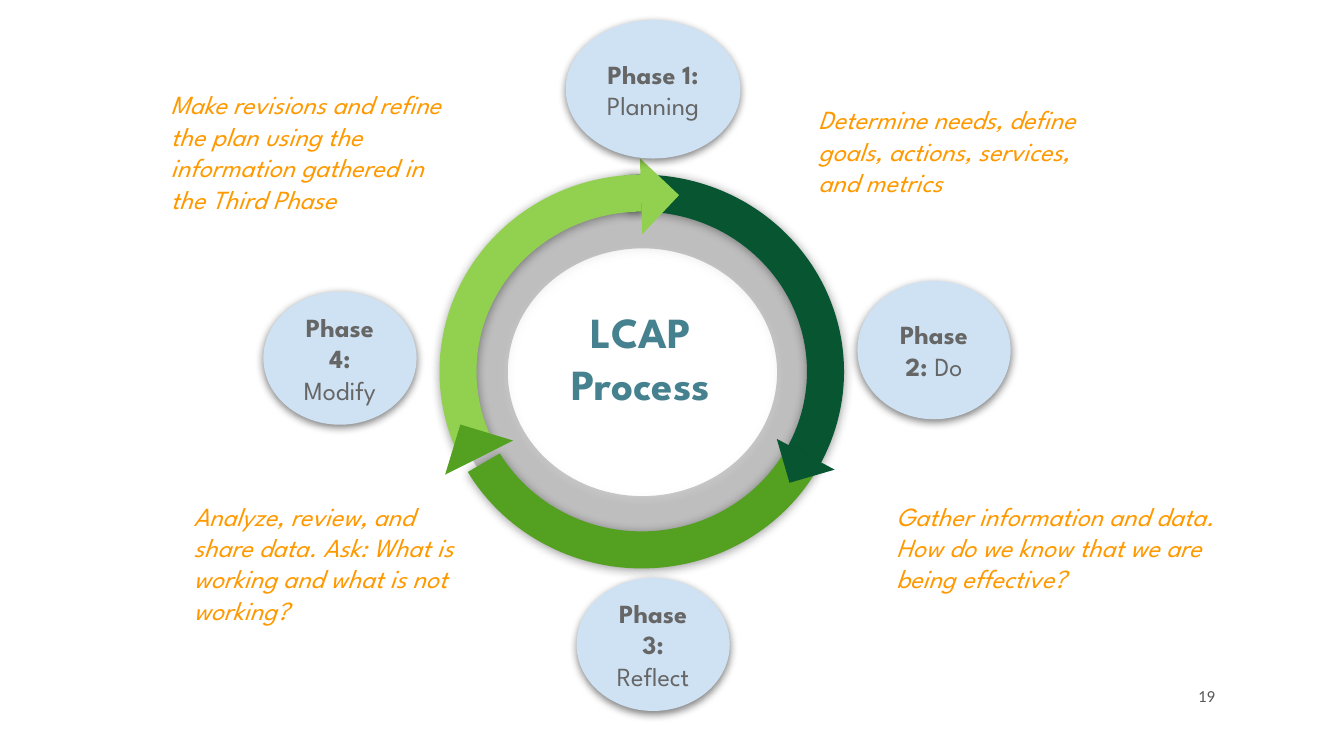
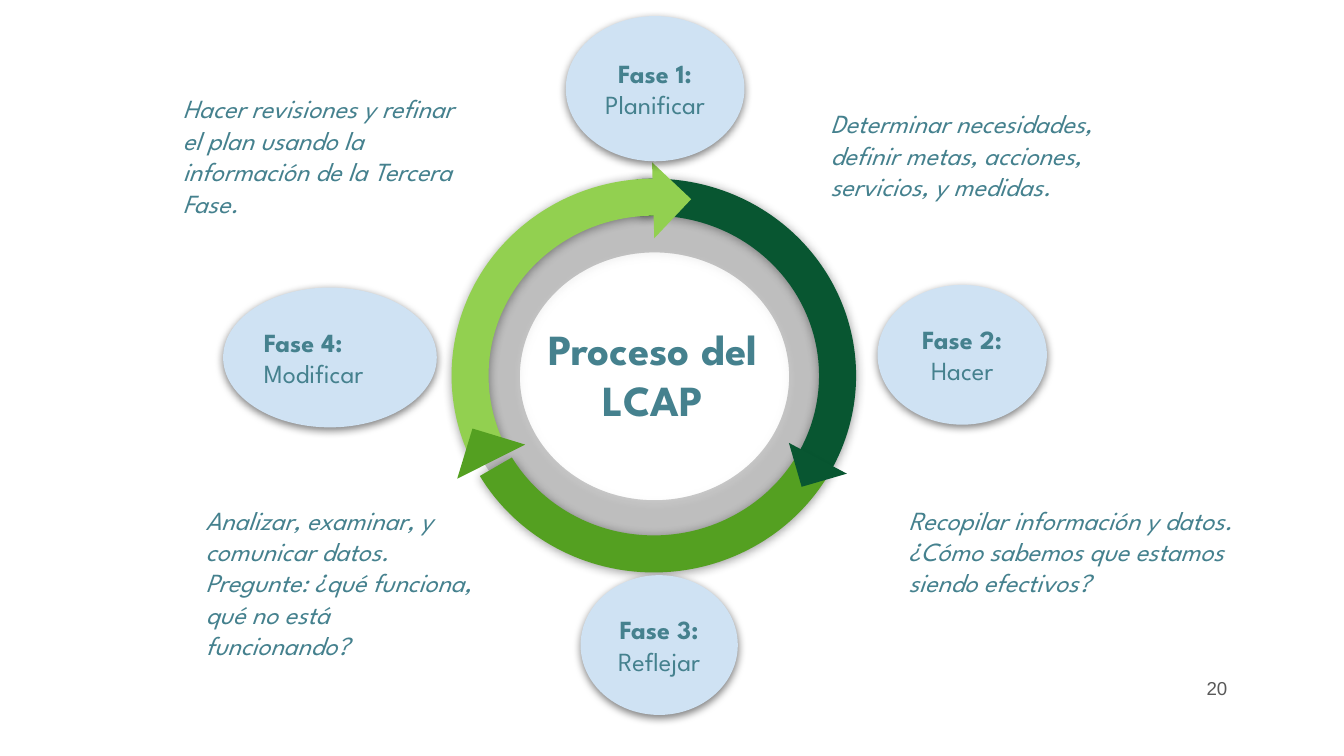
from dataclasses import dataclass
from lxml.etree import SubElement
from pptx import Presentation
from pptx.dml.color import RGBColor
from pptx.enum.shapes import MSO_SHAPE as Shape
from pptx.enum.text import MSO_ANCHOR as Anchor, MSO_AUTO_SIZE as Fit, PP_ALIGN as Align
from pptx.oxml.ns import qn
from pptx.util import Inches, Pt


@dataclass(frozen=True)
class Theme:
    font: str = "League Spartan"
    teal: str = "45818E"
    grey: str = "666666"
    orange: str = "FF9900"
    number: str = "595959"
    bubble: str = "CFE2F3"
    ring: str = "000000"
    dark: str = "085631"
    mid: str = "54A021"
    light: str = "92D050"
    head: int = 23
    text: int = 14


THEME = Theme()
COLS, ROWS = 100, 56.25
CELL = Inches(0.1)

# blur and distance in points, opacity in percent
SOFT = (5.6, 0.8, 40)
DEEP = (4.5, 1.5, 50)

RING = (33.4, 14.1, 28.8, 27.2)
ARC = (32.7, 13, 30.1, 29.3)
THICK = 9.4 / 100

# colour, then start and end in degrees, clockwise from the right
ARCS = {
    "dark": (THEME.dark, 265, 29),
    "light": (THEME.light, 155, 270),
    "mid": (THEME.mid, 29, 150),
}
# colour, turn, box
TIPS = {
    "light": (THEME.light, 223.3, (45.7, 12.6, 4, 4)),
    "dark": (THEME.dark, 343.8, (58.2, 32.1, 3.5, 3.4)),
    "mid": (THEME.mid, 106.9, (33.7, 32, 3.9, 4.1)),
}
NOTES = [
    (60.2, 7, 23.4, 8.2),
    (66, 36.5, 28.7, 8.2),
    (13.7, 36.5, 21.7, 9),
    (12, 5.9, 22.8, 8.2),
]


@dataclass(frozen=True)
class Cycle:
    """One slide; move shifts the wheel and the notes, mid is the title's centre row."""
    title: str
    mid: float
    move: tuple
    phases: list
    notes: list
    inks: tuple
    number: tuple


ENGLISH = Cycle(
    "LCAP Process", 26.6, (0, 0),
    [("Phase 1: ", "Planning", (42.1, 1.5, 13, 10.3)),
     ("Phase 2: ", "Do", (63.8, 20.9, 11.4, 10.3)),
     ("Phase 3: ", "Reflect", (42.9, 43, 11.4, 9.9)),
     ("Phase 4:", "Modify", (19.6, 21.7, 11.4, 9.9))],
    ["Determine needs, define goals, actions, services, and metrics",
     "Gather information and data. How do we know that we are being effective?",
     "Analyze, review, and share data. Ask: What is working and what is not working?",
     "Make revisions and refine the plan using the information gathered in the Third Phase"],
    (THEME.grey, THEME.orange),
    ("19", "Calibri", 9, (87.4, 50.3, 4, 2.9)))

SPANISH = Cycle(
    "Proceso del LCAP", 27.8, (0.9, 0.3),
    [("Fase 1: ", "Planificar", (42.1, 1.2, 13.3, 10.8)),
     ("Fase 2: ", "Hacer", (65.3, 21.2, 12.6, 10.4)),
     ("Fase 3: ", "Reflejar", (43.2, 42.8, 11.7, 10.4)),
     ("Fase 4: ", "Modificar", (16.6, 21.4, 15.9, 10.4))],
    ["Determinar necesidades, definir metas, acciones, servicios, y medidas.",
     "Recopilar información y datos. ¿Cómo sabemos que estamos siendo efectivos?",
     "Analizar, examinar, y comunicar datos. Pregunte: ¿qué funciona, qué no está funcionando?",
     "Hacer revisiones y refinar el plan usando la información de la Tercera Fase."],
    (THEME.teal, THEME.teal),
    ("20", "Arial", 10, (88.2, 49.7, 4.1, 3)))


def cells(box, move=(0, 0)):
    """Turn a box in grid cells into lengths, shifted by move."""
    left, top, wide, high = box
    return [round(n * CELL) for n in (left + move[0], top + move[1], wide, high)]


def add_run(para, text, ink, size=THEME.text, font=THEME.font, bold=False, slant=False):
    run = para.add_run()
    run.text = text
    face = run.font
    face.name, face.size = font, Pt(size)
    face.bold, face.italic = bold, slant
    face.color.rgb = RGBColor.from_string(ink)


def set_frame(shape, inset, anchor, align):
    """Prepare the text frame and return its first paragraph."""
    frame = shape.text_frame
    frame.word_wrap, frame.auto_size = True, Fit.NONE
    frame.vertical_anchor = anchor
    frame.margin_left = frame.margin_right = Inches(inset)
    frame.margin_top = frame.margin_bottom = Inches(inset)
    para = frame.paragraphs[0]
    para.alignment = align
    return para


def add_alpha(color, share):
    SubElement(color, qn("a:alpha"), val=str(share * 1000))


def add_form(slide, kind, box, ink, shade=None, turn=0):
    """Add a flat preset shape with an optional downward shadow."""
    form = slide.shapes.add_shape(kind, *box)
    form.fill.solid()
    form.fill.fore_color.rgb = RGBColor.from_string(ink)
    form.line.fill.background()
    form.rotation = turn
    form.shadow.inherit = False
    if shade:
        blur, dist, share = shade
        effects = form._element.spPr.find(qn("a:effectLst"))
        outer = SubElement(effects, qn("a:outerShdw"), blurRad=str(Pt(blur)),
                           dist=str(Pt(dist)), dir="5400000", algn="ctr", rotWithShape="0")
        add_alpha(SubElement(outer, qn("a:srgbClr"), val="000000"), share)
    return form


def add_ring(slide, move, shade=None):
    ring = add_form(slide, Shape.DONUT, cells(RING, move), THEME.ring, shade)
    ring.adjustments[0] = 16.1 / 100
    add_alpha(ring._element.spPr.find(qn("a:solidFill"))[0], 11)


def add_arc(slide, name, move):
    ink, start, end = ARCS[name]
    arc = add_form(slide, Shape.BLOCK_ARC, cells(ARC, move), ink, SOFT)
    # angles are stored in 60000ths of a degree, ratios in 100000ths
    for spot, value in enumerate((start * 0.6, end * 0.6, THICK)):
        arc.adjustments[spot] = value


def add_tip(slide, name, move):
    ink, turn, box = TIPS[name]
    add_form(slide, Shape.RIGHT_TRIANGLE, cells(box, move), ink, turn=turn)


def add_wheel(slide, move):
    add_ring(slide, move)
    add_ring(slide, move, DEEP)
    add_arc(slide, "dark", move)
    add_arc(slide, "light", move)
    add_tip(slide, "light", move)
    add_arc(slide, "mid", move)
    add_tip(slide, "dark", move)
    add_tip(slide, "mid", move)


def add_phase(slide, label, word, box, ink, align):
    """A label without a trailing space puts the word in its own paragraph."""
    oval = add_form(slide, Shape.OVAL, cells(box), THEME.bubble, DEEP)
    para = set_frame(oval, 0.07, Anchor.MIDDLE, align)
    add_run(para, label, ink, bold=True)
    if not label.endswith(" "):
        para = oval.text_frame.add_paragraph()
        para.alignment = align
    add_run(para, word, ink)


def add_note(slide, text, box, ink):
    note = slide.shapes.add_textbox(*box)
    add_run(set_frame(note, 0.07, Anchor.TOP, Align.LEFT), text, ink, slant=True)


def add_number(slide, text, font, size, box):
    number = slide.shapes.add_textbox(*cells(box))
    para = set_frame(number, 0.1, Anchor.MIDDLE, Align.RIGHT)
    add_run(para, text, THEME.number, size, font)


def set_title(slide, text, mid, move):
    title = slide.shapes.title
    box = (38.2 + move[0], mid - 5, 19, 10)
    title.left, title.top, title.width, title.height = cells(box)
    para = set_frame(title, 0.1, Anchor.MIDDLE, Align.CENTER)
    add_run(para, text, THEME.teal, THEME.head, bold=True)


def add_cycle(deck, cycle, last):
    """Build one slide; last aligns the fourth phase."""
    slide = deck.slides.add_slide(deck.slide_layouts[5])
    ink, tint = cycle.inks
    set_title(slide, cycle.title, cycle.mid, cycle.move)
    add_wheel(slide, cycle.move)
    aligns = [Align.CENTER] * 3 + [last]
    for (label, word, box), align in zip(cycle.phases, aligns):
        add_phase(slide, label, word, box, ink, align)
    for text, box in zip(cycle.notes, NOTES):
        add_note(slide, text, cells(box, cycle.move), tint)
    add_number(slide, *cycle.number)


def main():
    deck = Presentation()
    deck.slide_width, deck.slide_height = COLS * CELL, round(ROWS * CELL)
    add_cycle(deck, ENGLISH, Align.CENTER)
    add_cycle(deck, SPANISH, Align.LEFT)
    deck.save("out.pptx")


if __name__ == "__main__":
    main()
